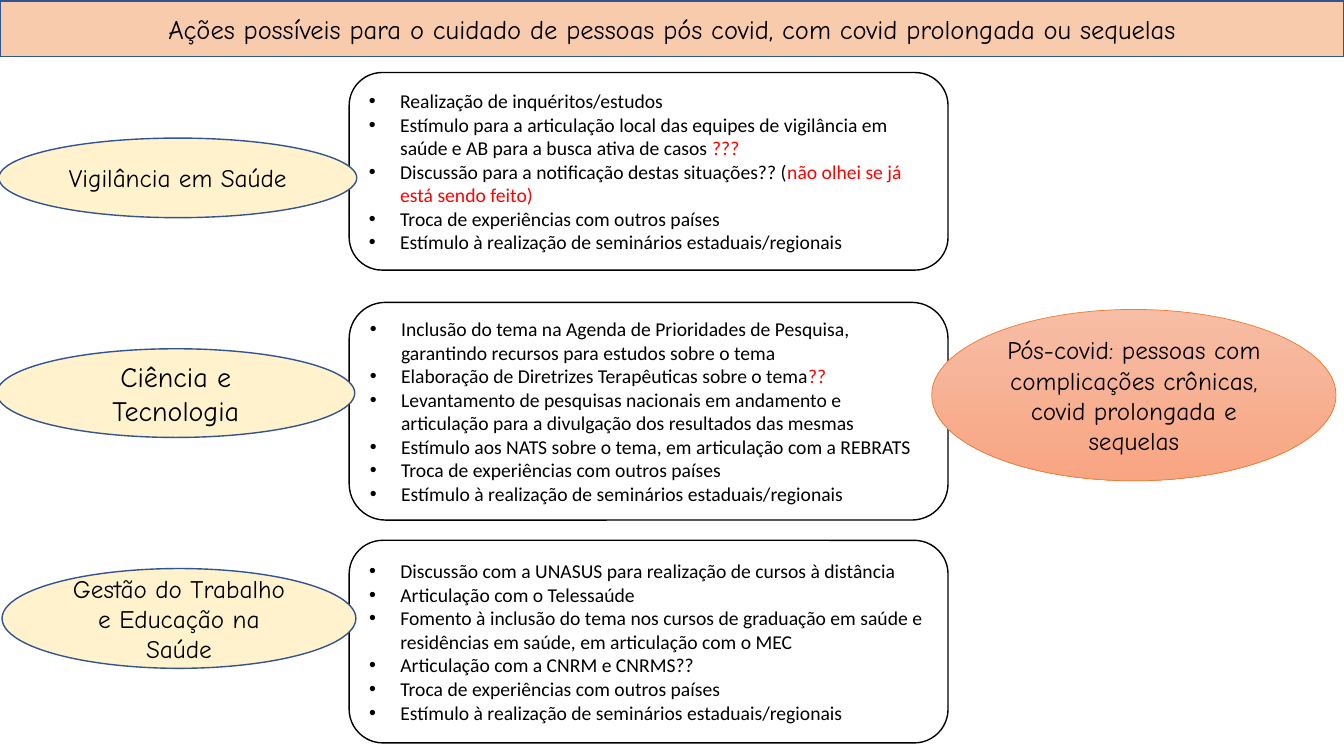
from lxml import etree
from pptx import Presentation
from pptx.dml.color import RGBColor
from pptx.enum.shapes import MSO_SHAPE
from pptx.enum.text import MSO_ANCHOR, MSO_AUTO_SIZE, PP_ALIGN
from pptx.oxml.ns import qn
from pptx.util import Inches, Pt

ELLIPSE = MSO_SHAPE.OVAL
MIDDLE = MSO_ANCHOR.MIDDLE
CENTER, LEFT = PP_ALIGN.CENTER, PP_ALIGN.LEFT
NO_AUTOFIT = MSO_AUTO_SIZE.NONE
COMPARISON_LAYOUT = 4

SLIDE_W, SLIDE_H = Inches(13.33), Inches(7.5)
HEAD_FONT, LIST_FONT = "Comic Neue", "Calibri"
BLACK, RED, NAVY, ORANGE = "000000", "FF0000", "325491", "ED7D31"
PEACH, CREAM = "F8CBAD", "FFF2CC"
LIST_X, LIST_W = 25.98, 44.56  # shared column of the lists, % of width

EXCHANGE = ["Troca de experiências com outros países"]
SEMINARS = ["Estímulo à realização de seminários estaduais/regionais"]

# Each area: label, label size, ellipse (x, y, w, h), list (y, h), items.
# An item holds a black part and, at times, a red part.
AREAS = [
    ("Vigilância em Saúde", 18, (-0.08, 18.27, 26.63, 10.53), (9.6, 26.13), [
        ["Realização de inquéritos/estudos"],
        ["Estímulo para a articulação local das equipes de vigilância em "
         "saúde e AB para a busca ativa de casos ", "???"],
        ["Discussão para a notificação destas situações?? (",
         "não olhei se já está sendo feito)"],
    ]),
    ("Ciência e Tecnologia", 20, (-0.23, 46.13, 26.63, 11.73), (40, 28.8), [
        ["Inclusão do tema na Agenda de Prioridades de Pesquisa, "
         "garantindo recursos para estudos sobre o tema"],
        ["Elaboração de Diretrizes Terapêuticas sobre o tema", "??"],
        ["Levantamento de pesquisas nacionais em andamento e articulação "
         "para a divulgação dos resultados das mesmas"],
        ["Estímulo aos NATS sobre o tema, em articulação com a REBRATS"],
    ]),
    ("Gestão do Trabalho e Educação na Saúde", 18,
     (0.15, 75.2, 26.33, 13.2), (71.47, 26.8), [
        ["Discussão com a UNASUS para realização de cursos à distância"],
        ["Articulação com o Telessaúde"],
        ["Fomento à inclusão do tema nos cursos de graduação em saúde e "
         "residências em saúde, em articulação com o MEC"],
        ["Articulação com a CNRM e CNRMS??"],
    ]),
]


def rgb(color):
    return RGBColor.from_string(color)


def place(sp, x, y, w, h):
    """Position a shape in percent of the slide's width and height."""
    sp.left, sp.top = int(SLIDE_W * x / 100), int(SLIDE_H * y / 100)
    sp.width, sp.height = int(SLIDE_W * w / 100), int(SLIDE_H * h / 100)


def outline(sp, color, width=1):
    sp.line.color.rgb = rgb(color)
    sp.line.width = Pt(width)


def fill_solid(sp, color):
    sp.fill.solid()
    sp.fill.fore_color.rgb = rgb(color)


def frame(sp):
    tf = sp.text_frame
    tf.word_wrap = True
    tf.auto_size = NO_AUTOFIT
    tf.vertical_anchor = MIDDLE
    return tf


def add_run(p, text, size, font, color=BLACK):
    r = p.add_run()
    r.text = text
    r.font.size, r.font.name, r.font.bold = Pt(size), font, False
    r.font.color.rgb = rgb(color)


def set_label(sp, text, size):
    p = frame(sp).paragraphs[0]
    p.alignment = CENTER
    add_run(p, text, size, HEAD_FONT)


def add_ellipse(slide, box, text, size):
    sp = slide.shapes.add_shape(ELLIPSE, 0, 0, 0, 0)
    sp.shadow.inherit = False
    place(sp, *box)
    set_label(sp, text, size)
    return sp


def round_corners(sp):
    geom = etree.Element(qn("a:prstGeom"), prst="roundRect")
    etree.SubElement(geom, qn("a:avLst"))
    sp.element.spPr.find(qn("a:xfrm")).addnext(geom)


def set_bullet(p):
    pPr = p._p.get_or_add_pPr()
    pPr.set("marL", str(Inches(0.31)))
    pPr.set("indent", str(-Inches(0.31)))
    etree.SubElement(pPr, qn("a:buFont"), typeface="Arial")
    etree.SubElement(pPr, qn("a:buChar"), char="•")


def fill_list(sp, y, h, items):
    place(sp, LIST_X, y, LIST_W, h)
    round_corners(sp)
    sp.fill.background()
    outline(sp, BLACK)
    tf = frame(sp)
    for i, parts in enumerate(items):
        p = tf.paragraphs[0] if i == 0 else tf.add_paragraph()
        p.alignment = LEFT
        p.space_before = Pt(0)
        set_bullet(p)
        for text, color in zip(parts, (BLACK, RED)):
            add_run(p, text, 14, LIST_FONT, color)


def main():
    prs = Presentation()
    prs.slide_width, prs.slide_height = SLIDE_W, SLIDE_H
    slide = prs.slides.add_slide(prs.slide_layouts[COMPARISON_LAYOUT])
    title, *bodies = slide.placeholders

    # Title band
    place(title, 0, 0.13, 100, 7.33)
    fill_solid(title, PEACH)
    outline(title, NAVY)
    set_label(title, "Ações possíveis para o cuidado de pessoas pós covid, "
              "com covid prolongada ou sequelas", 19)

    # Areas with their lists of actions
    for body, (label, size, oval, rows, items) in zip(bodies, AREAS):
        fill_list(body, *rows, items + [EXCHANGE, SEMINARS])
        sp = add_ellipse(slide, oval, label, size)
        fill_solid(sp, CREAM)
        outline(sp, NAVY)
    for spare in bodies[len(AREAS):]:
        spare.element.getparent().remove(spare.element)

    # People cared for
    sp = add_ellipse(slide, (69.32, 40.93, 30.08, 22.67),
                     "Pós-covid: pessoas com complicações crônicas, "
                     "covid prolongada e sequelas", 18)
    sp.fill.gradient()
    sp.fill.gradient_angle = 270
    for stop, color in zip(sp.fill.gradient_stops, ("F7BDA5", "F8A582")):
        stop.color.rgb = rgb(color)
    outline(sp, ORANGE, 0.5)

    prs.save("out.pptx")


if __name__ == "__main__":
    main()
